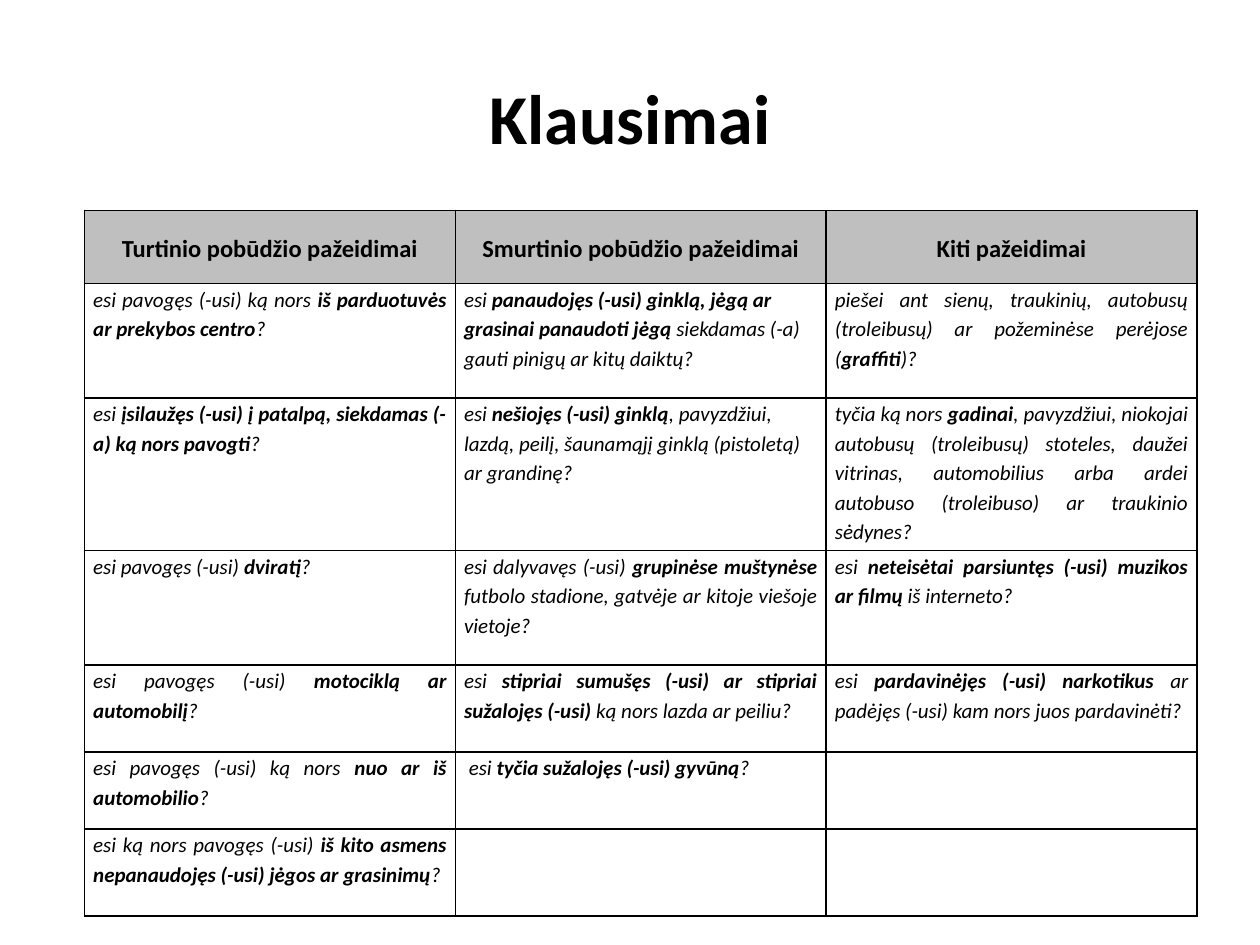
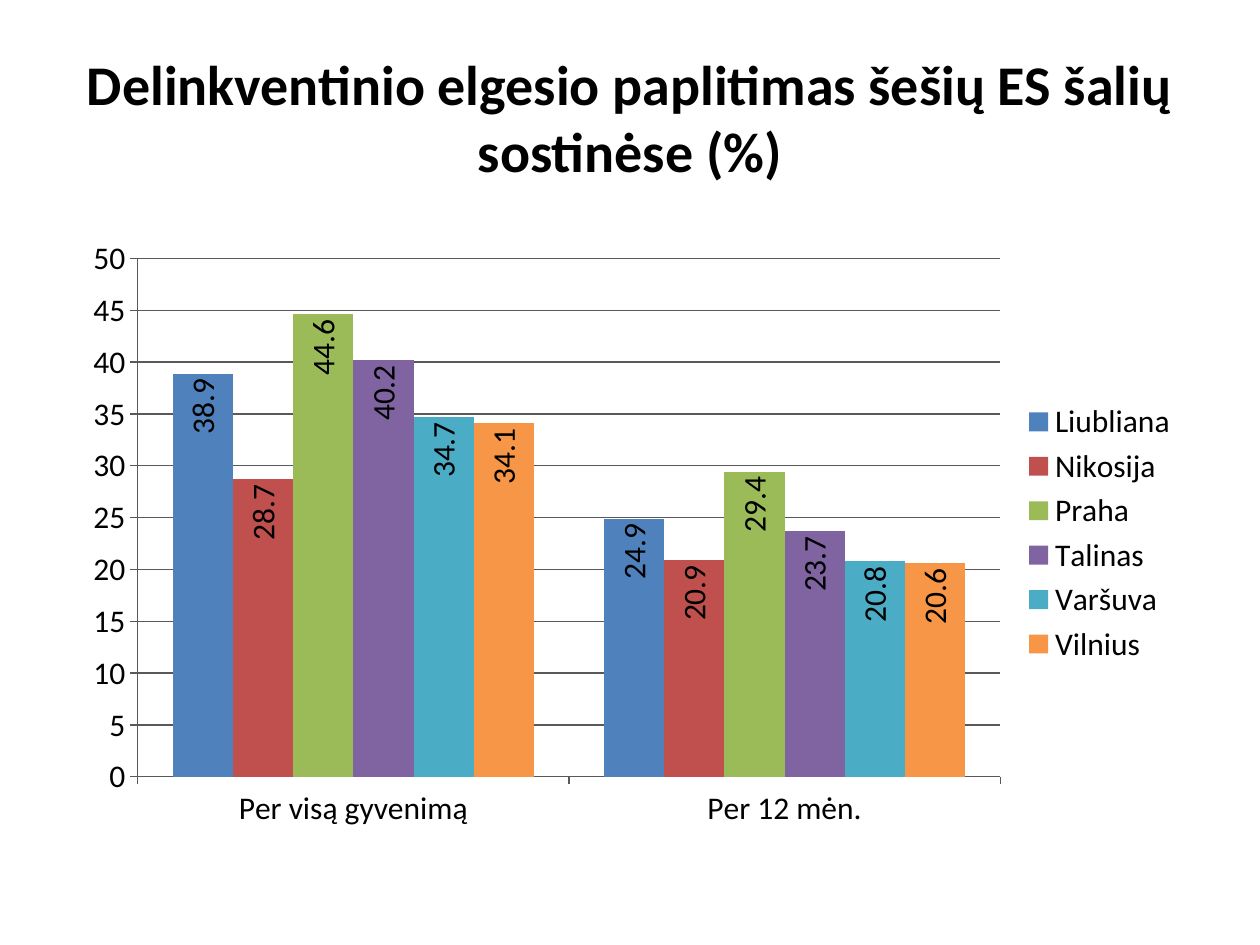
"""Build a question table slide and a column chart slide on delinquent behaviour."""
from lxml import etree
from pptx import Presentation
from pptx.chart.data import CategoryChartData
from pptx.dml.color import RGBColor
from pptx.enum.chart import XL_CHART_TYPE, XL_LABEL_POSITION, XL_LEGEND_POSITION, XL_TICK_MARK
from pptx.enum.text import MSO_ANCHOR, PP_ALIGN
from pptx.oxml import parse_xml
from pptx.oxml.ns import nsdecls, qn
from pptx.util import Inches, Pt

CENTER, LEFT, JUSTIFY = PP_ALIGN.CENTER, PP_ALIGN.LEFT, PP_ALIGN.JUSTIFY
MIDDLE, TOP = MSO_ANCHOR.MIDDLE, MSO_ANCHOR.TOP
COLUMN = XL_CHART_TYPE.COLUMN_CLUSTERED
INSIDE_END = XL_LABEL_POSITION.INSIDE_END
LEGEND_RIGHT = XL_LEGEND_POSITION.RIGHT
TICK_OUT = XL_TICK_MARK.OUTSIDE

FONT = "Calibri"
COLORS = {"text": "000000", "paper": "FFFFFF", "header": "BFBFBF", "axis": "595959"}
TITLE_BOX = (0.5, 0.3, 9, 1.25)
TITLE_ONLY = 5

QUESTIONS_TITLE = "Klausimai"
HEADERS = ["Turtinio pobūdžio pažeidimai", "Smurtinio pobūdžio pažeidimai", "Kiti pažeidimai"]
QUESTIONS = [
    ["esi pavogęs (-usi) ką nors *iš parduotuvės ar prekybos centro*?",
     "esi *panaudojęs (-usi) ginklą, jėgą ar grasinai panaudoti jėgą *"
     "siekdamas (-a) gauti pinigų ar kitų daiktų?",
     "piešei ant sienų, traukinių, autobusų (troleibusų) ar požeminėse perėjose (*graffiti*)?"],
    ["esi *įsilaužęs (-usi) į patalpą, siekdamas (-a) ką nors pavogti*?",
     "esi *nešiojęs (-usi) ginklą*, pavyzdžiui, lazdą, peilį, šaunamąjį ginklą "
     "(pistoletą) ar grandinę?",
     "tyčia ką nors *gadinai*, pavyzdžiui, niokojai autobusų (troleibusų) stoteles, daužei "
     "vitrinas, automobilius arba ardei autobuso (troleibuso) ar traukinio sėdynes?"],
    ["esi pavogęs (-usi) *dviratį*?",
     "esi dalyvavęs (-usi) *grupinėse muštynėse* futbolo stadione, gatvėje ar kitoje "
     "viešoje vietoje?",
     "esi *neteisėtai parsiuntęs (-usi) muzikos ar filmų* iš interneto?"],
    ["esi pavogęs (-usi) *motociklą ar automobilį*?",
     "esi *stipriai sumušęs (-usi) ar stipriai sužalojęs (-usi) *ką nors lazda ar peiliu?",
     "esi *pardavinėjęs (-usi) narkotikus *ar padėjęs (-usi) kam nors juos pardavinėti?"],
    ["esi pavogęs (-usi) ką nors *nuo ar iš automobilio*?",
     " esi *tyčia sužalojęs (-usi) gyvūną*?", ""],
    ["esi ką nors pavogęs (-usi) *iš kito asmens nepanaudojęs (-usi) jėgos ar grasinimų*?",
     "", ""],
]
LEFT_CELLS = {(1, 1), (2, 1), (5, 1)}
TABLE_BOX = (0.67, 1.67, 8.83, 5.6)
ROW_HEIGHTS = [0.58, 0.91, 1.21, 0.91, 0.69, 0.61, 0.69]
CELL_MARGINS = {"margin_left": 0.07, "margin_right": 0.07, "margin_top": 0, "margin_bottom": 0}

CHART_TITLE = "Delinkventinio elgesio paplitimas šešių ES šalių sostinėse (%)"
PERIODS = ["Per visą gyvenimą", "Per 12 mėn."]
CITIES = [
    ("Liubliana", (38.9, 24.9), "4F81BD"),
    ("Nikosija", (28.7, 20.9), "C0504D"),
    ("Praha", (44.6, 29.4), "9BBB59"),
    ("Talinas", (40.2, 23.7), "8064A2"),
    ("Varšuva", (34.7, 20.8), "4BACC6"),
    ("Vilnius", (34.1, 20.6), "F79646"),
]
CHART_BOX = (0.56, 1.81, 8.89, 4.84)
PLOT_SHARES = {"x": 0.06, "y": 0.05, "w": 0.77, "h": 0.85}
AXIS_FORMAT = {"minimum_scale": 0, "maximum_scale": 50, "major_unit": 5}


def box(lengths):
    return [Inches(n) for n in lengths]


def rgb(name):
    return RGBColor.from_string(COLORS.get(name, name))


def style(font, size, **flags):
    font.color.rgb = rgb("text")
    for key, value in {"name": FONT, "size": Pt(size), **flags}.items():
        setattr(font, key, value)


def add_titled_slide(prs, text, size):
    s = prs.slides.add_slide(prs.slide_layouts[TITLE_ONLY])
    title = s.shapes.title
    title.left, title.top, title.width, title.height = box(TITLE_BOX)
    title.text_frame.vertical_anchor = MIDDLE
    p = title.text_frame.paragraphs[0]
    p.alignment = CENTER
    r = p.add_run()
    r.text = text
    style(r.font, size, bold=True)
    return s


def add_borders(cell):
    tc_pr = cell._tc.get_or_add_tcPr()
    for i, side in enumerate("LRTB"):
        tc_pr.insert(i, parse_xml(
            f'<a:ln{side} {nsdecls("a")} w="{Pt(1)}"><a:solidFill>'
            f'<a:srgbClr val="{COLORS["text"]}"/></a:solidFill></a:ln{side}>'))


def fill_cell(cell, text, header, alignment):
    for key, value in CELL_MARGINS.items():
        setattr(cell, key, Inches(value))
    cell.vertical_anchor = MIDDLE if header else TOP
    cell.fill.solid()
    cell.fill.fore_color.rgb = rgb("header" if header else "paper")
    add_borders(cell)
    p = cell.text_frame.paragraphs[0]
    p.alignment, p.line_spacing = alignment, 1.15
    for i, part in enumerate(text.split("*")):
        if part:
            r = p.add_run()
            r.text = part
            style(r.font, 14 if header else 12, bold=header or i % 2 == 1, italic=not header)


def add_questions(s):
    rows = [HEADERS] + QUESTIONS
    table = s.shapes.add_table(len(rows), len(HEADERS), *box(TABLE_BOX)).table
    table.first_row = table.horz_banding = False
    for column in table.columns:
        column.width = Inches(TABLE_BOX[2] / len(HEADERS))
    for y, texts in enumerate(rows):
        table.rows[y].height = Inches(ROW_HEIGHTS[y])
        for x, text in enumerate(texts):
            alignment = CENTER if y == 0 else LEFT if (y, x) in LEFT_CELLS else JUSTIFY
            fill_cell(table.cell(y, x), text, y == 0, alignment)


def place_plot(chart):
    plot_area = chart._chartSpace.find(".//" + qn("c:plotArea"))
    for old in plot_area.findall(qn("c:layout")):
        plot_area.remove(old)
    layout = etree.Element(qn("c:layout"))
    manual = etree.SubElement(layout, qn("c:manualLayout"))
    settings = {"layoutTarget": "inner", "xMode": "edge", "yMode": "edge", **PLOT_SHARES}
    for key, value in settings.items():
        etree.SubElement(manual, qn(f"c:{key}")).set("val", str(value))
    plot_area.insert(0, layout)


def format_series(series, color):
    series.format.fill.solid()
    series.format.fill.fore_color.rgb = rgb(color)
    series.invert_if_negative = False
    labels = series.data_labels
    labels.show_value, labels.position = True, INSIDE_END
    style(labels.font, 18)
    body = labels._element.find(".//" + qn("a:bodyPr"))
    body.set("rot", "-5400000")
    body.set("vert", "horz")


def add_prevalence(s):
    data = CategoryChartData()
    data.categories = PERIODS
    for name, values, _ in CITIES:
        data.add_series(name, values)
    chart = s.shapes.add_chart(COLUMN, *box(CHART_BOX), data).chart
    style(chart.font, 18)
    chart.has_title = False
    chart.has_legend = True
    chart.legend.position = LEGEND_RIGHT
    chart.legend.include_in_layout = False
    plot = chart.plots[0]
    plot.gap_width, plot.overlap, plot.vary_by_categories = 117, 0, False
    for series, (_, _, color) in zip(plot.series, CITIES):
        format_series(series, color)
    value_axis = chart.value_axis
    for key, value in AXIS_FORMAT.items():
        setattr(value_axis, key, value)
    value_axis.has_major_gridlines = True
    for axis in (chart.category_axis, value_axis):
        axis.major_tick_mark = TICK_OUT
    for part in (chart.category_axis, value_axis, value_axis.major_gridlines):
        part.format.line.color.rgb = rgb("axis")
        part.format.line.width = Pt(0.75)
    place_plot(chart)


def main():
    prs = Presentation()
    prs.slide_width, prs.slide_height = Inches(10), Inches(7.5)
    add_questions(add_titled_slide(prs, QUESTIONS_TITLE, 40))
    add_prevalence(add_titled_slide(prs, CHART_TITLE, 32))
    prs.save("out.pptx")


if __name__ == "__main__":
    main()
